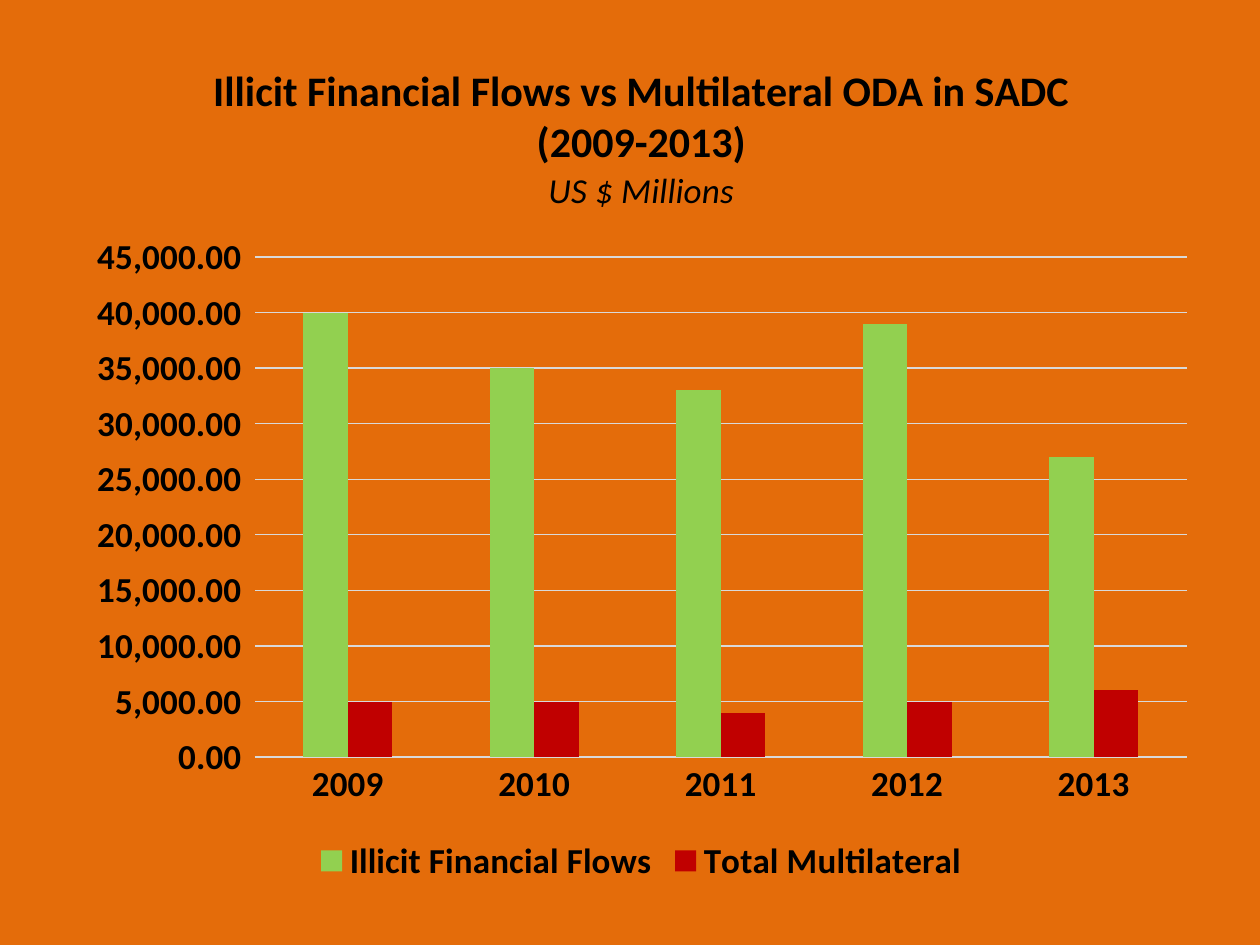
from lxml import etree
from pptx import Presentation
from pptx import util as u
from pptx.chart import data as chart_data
from pptx.dml.color import RGBColor
from pptx.enum import chart as kinds
from pptx.oxml import ns

ORANGE = RGBColor(0xE4, 0x6C, 0x0A)
GREEN = RGBColor(0x92, 0xD0, 0x50)
RED = RGBColor(0xC0, 0x00, 0x00)
GREY = RGBColor(0xD9, 0xD9, 0xD9)
BLACK = RGBColor(0x00, 0x00, 0x00)

YEARS = ["2009", "2010", "2011", "2012", "2013"]
FLOWS = [
    ("Illicit Financial Flows", [40000, 35000, 33000, 39000, 27000], GREEN),
    ("Total Multilateral", [5000, 5000, 4000, 5000, 6000], RED),
]
TITLE_LINES = [
    ("Illicit Financial Flows vs Multilateral ODA in SADC (2009-2013)", 24, True),
    ("US $ Millions", 20, False),
]
AMOUNT_FORMAT = "#,##0.00_ ;\\-#,##0.00\\ "
LEFT, TOP, WIDTH, HEIGHT = 0.59, 0.29, 9, 6.77
PLOT_LEFT, PLOT_TOP, PLOT_WIDTH, PLOT_HEIGHT = 2.02, 2.04, 7.4, 3.97


def style_font(font, size, bold=True):
    font.name = "Calibri"
    font.size = u.Pt(size)
    font.bold = bold
    font.color.rgb = BLACK


deck = Presentation()
deck.slide_width = u.Inches(10)
deck.slide_height = u.Inches(7.5)
page = deck.slides.add_slide(deck.slide_layouts[6])
page.background.fill.solid()
page.background.fill.fore_color.rgb = ORANGE

table = chart_data.CategoryChartData(number_format=AMOUNT_FORMAT)
table.categories = YEARS
for name, values, color in FLOWS:
    table.add_series(name, values)
chart = page.shapes.add_chart(
    kinds.XL_CHART_TYPE.COLUMN_CLUSTERED,
    u.Inches(LEFT), u.Inches(TOP), u.Inches(WIDTH), u.Inches(HEIGHT), table,
).chart
style_font(chart.font, 20)

chart.has_title = True
chart.chart_title.include_in_layout = False
frame = chart.chart_title.text_frame
for index, (line, size, bold) in enumerate(TITLE_LINES):
    para = frame.add_paragraph() if index else frame.paragraphs[0]
    span = para.add_run()
    span.text = line
    style_font(span.font, size, bold)
    span.font.italic = not bold

plot = chart.plots[0]
plot.gap_width = 219
plot.overlap = 0
plot.vary_by_categories = False
for series, (name, values, color) in zip(plot.series, FLOWS):
    series.format.fill.solid()
    series.format.fill.fore_color.rgb = color
    series.invert_if_negative = False

years = chart.category_axis
amounts = chart.value_axis
for axis in (years, amounts):
    axis.major_tick_mark = kinds.XL_TICK_MARK.NONE
    axis.minor_tick_mark = kinds.XL_TICK_MARK.NONE
    style_font(axis.tick_labels.font, 20)
amounts.minimum_scale = 0
amounts.maximum_scale = 45000
amounts.major_unit = 5000
amounts.tick_labels.number_format = AMOUNT_FORMAT
amounts.tick_labels.number_format_is_linked = False
amounts.format.line.fill.background()
for line in (years.format.line, amounts.major_gridlines.format.line):
    line.color.rgb = GREY
    line.width = u.Pt(0.75)

chart.has_legend = True
chart.legend.position = kinds.XL_LEGEND_POSITION.BOTTOM
chart.legend.include_in_layout = False
style_font(chart.legend.font, 20)

plot_area = chart.element.find(".//" + ns.qn("c:plotArea"))
for old_layout in plot_area.findall(ns.qn("c:layout")):
    plot_area.remove(old_layout)
layout = etree.Element(ns.qn("c:layout"))
plot_area.insert(0, layout)
manual = etree.SubElement(layout, ns.qn("c:manualLayout"))
settings = {
    "layoutTarget": "inner",
    "xMode": "edge",
    "yMode": "edge",
    "x": (PLOT_LEFT - LEFT) / WIDTH,
    "y": (PLOT_TOP - TOP) / HEIGHT,
    "w": PLOT_WIDTH / WIDTH,
    "h": PLOT_HEIGHT / HEIGHT,
}
for key, value in settings.items():
    etree.SubElement(manual, ns.qn("c:" + key), val=str(value))

deck.save("out.pptx")
